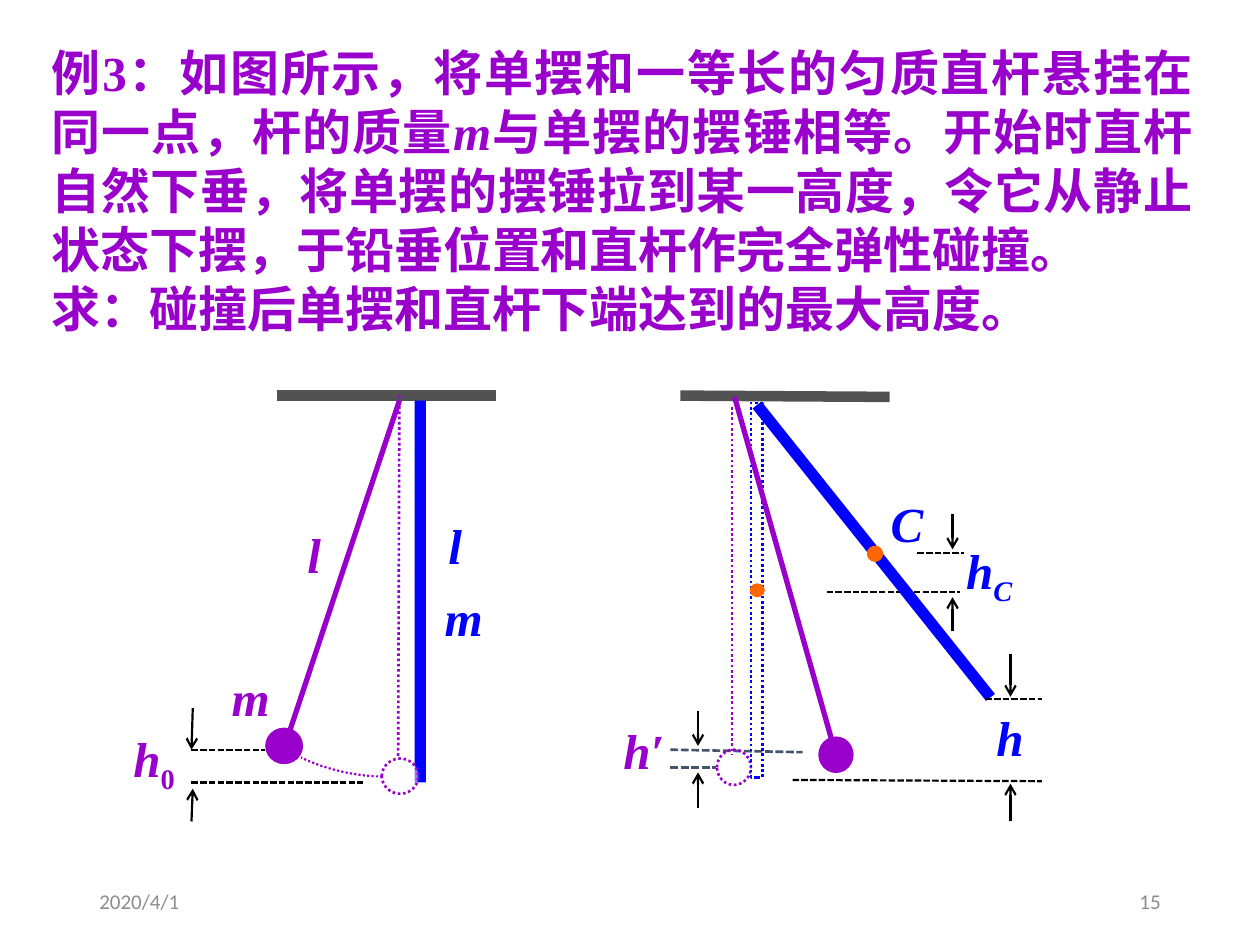
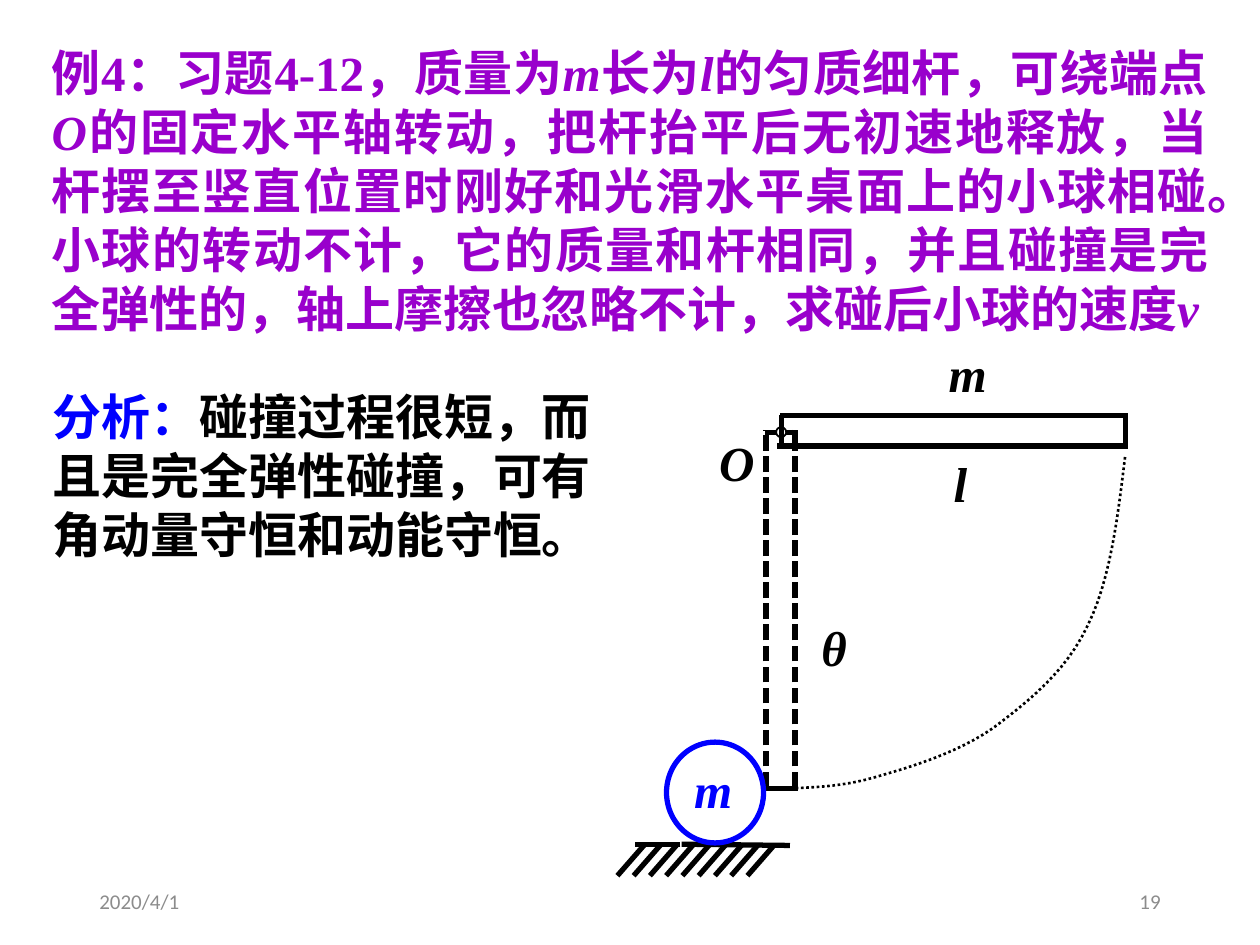
import dataclasses

import pptx
import pptx.dml.color
import pptx.enum.dml
import pptx.enum.shapes
import pptx.enum.text
import pptx.oxml
import pptx.oxml.ns
import pptx.oxml.xmlchemy
import pptx.util

RGBColor = pptx.dml.color.RGBColor
Dash = pptx.enum.dml.MSO_LINE
Preset = pptx.enum.shapes.MSO_SHAPE
Align = pptx.enum.text.PP_ALIGN
Anchor = pptx.enum.text.MSO_ANCHOR
qn = pptx.oxml.ns.qn

PURPLE = RGBColor(0x99, 0x00, 0xCC)
BLUE = RGBColor(0x00, 0x00, 0xFF)
BLACK = RGBColor(0x00, 0x00, 0x00)
WHITE = RGBColor(0xFF, 0xFF, 0xFF)
ORANGE = RGBColor(0xFF, 0x66, 0x00)
CEILING_GREY = RGBColor(0x52, 0x52, 0x52)
SLATE = RGBColor(0x44, 0x54, 0x6A)
FOOTER_GREY = RGBColor(0x8C, 0x8C, 0x8C)

SERIF = "Times New Roman"
HAN = "Noto Sans CJK SC"
SLIDE_WIDTH = pptx.util.Inches(10)
SLIDE_HEIGHT = pptx.util.Inches(7.5)
COLUMNS, ROWS = 100, 75
LABEL_HEIGHT = 5.7
DOTTED, DASHED = Dash.ROUND_DOT, Dash.SQUARE_DOT
BODY = {"size": pptx.util.Pt(28), "name": SERIF, "bold": True}
FOOTER = {"size": pptx.util.Pt(12), "name": "Calibri"}


@dataclasses.dataclass
class Box:
    left: float
    top: float
    width: float
    height: float

    def point(self, column, row):
        return (round((self.left + column) * SLIDE_WIDTH / COLUMNS),
                round((self.top + row) * SLIDE_HEIGHT / ROWS))

    def inner(self, column, row, width, height):
        return Box(self.left + column, self.top + row, width, height)

    def frame(self):
        return (*self.point(0, 0),
                round(self.width * SLIDE_WIDTH / COLUMNS),
                round(self.height * SLIDE_HEIGHT / ROWS))


def apply_format(target, formats):
    for name, value in formats.items():
        setattr(target, name, value)


def make_element(tag, **attributes):
    element = pptx.oxml.xmlchemy.OxmlElement(tag)
    for name, value in attributes.items():
        element.set(name, str(value))
    return element


def add_span(para, text, color, formats=BODY, italic=False, baseline=None):
    span = para.add_run()
    span.text = text
    apply_format(span.font, formats | {"italic": italic})
    span.font.color.rgb = color
    properties = span.font._element
    if baseline:
        properties.set("baseline", str(baseline))
    properties.find(qn("a:latin")).addnext(make_element("a:ea", typeface=HAN))


def add_text_box(shapes, box, wrap=True, anchor=Anchor.TOP):
    text_box = shapes.add_textbox(*box.frame())
    apply_format(text_box.text_frame, {"word_wrap": wrap, "vertical_anchor": anchor})
    return text_box.text_frame.paragraphs[0]


def format_line(line, color, weight, dash=None):
    if color is None:
        line.fill.background()
        return
    line.color.rgb = color
    line.width = pptx.util.Pt(weight)
    if dash:
        line.dash_style = dash


class Figure:
    def __init__(self, page, box):
        self.shapes = page.shapes.add_group_shape().shapes
        self.box = box

    def line(self, start, end, color=BLACK, weight=1.25, dash=None, arrow=False):
        connector = self.shapes.add_connector(
            pptx.enum.shapes.MSO_CONNECTOR.STRAIGHT,
            *self.box.point(*start), *self.box.point(*end))
        format_line(connector.line, color, weight, dash)
        properties = connector._element.spPr
        if arrow:
            properties.find(qn("a:ln")).append(make_element("a:tailEnd", type="arrow"))
        properties.append(make_element("a:effectLst"))

    def dashes(self, *pairs):
        for start, end in pairs:
            self.line(start, end, dash=DASHED)

    def arrows(self, *pairs):
        for start, end in pairs:
            self.line(start, end, arrow=True)

    def shape(self, preset, place, fill=None, line=None, weight=0.75, dash=None,
              rotation=0, opacity=None):
        shape = self.shapes.add_shape(preset, *self.box.inner(*place).frame())
        shape.shadow.inherit = False
        shape.rotation = rotation
        if fill is None:
            shape.fill.background()
        else:
            shape.fill.solid()
            shape.fill.fore_color.rgb = fill
        if opacity:
            fill_color = shape._element.spPr.find(qn("a:solidFill"))[0]
            fill_color.append(make_element("a:alpha", val=opacity * 1000))
        format_line(shape.line, line, weight, dash)
        return shape

    def label(self, text, column, row, width, color, subscript="", upright=False):
        para = add_text_box(
            self.shapes, self.box.inner(column, row, width, LABEL_HEIGHT), wrap=False)
        add_span(para, text, color, italic=True)
        if subscript:
            add_span(para, subscript, color, italic=not upright, baseline=-25000)

    def curve(self, start, segments, color, weight, dash, steps=12):
        points = []
        origin = start
        for segment in segments:
            corners = (origin, *segment)
            for step in range(1, steps + 1):
                t = step / steps
                shares = ((1 - t) ** 3, 3 * t * (1 - t) ** 2, 3 * t * t * (1 - t), t ** 3)
                points.append(self.box.point(*(
                    sum(share * corner[axis] for share, corner in zip(shares, corners))
                    for axis in (0, 1))))
            origin = segment[-1]
        builder = self.shapes.build_freeform(*self.box.point(*start))
        builder.add_line_segments(points, close=False)
        shape = builder.convert_to_shape()
        shape.shadow.inherit = False
        shape.fill.background()
        format_line(shape.line, color, weight, dash)


def add_problem_page(deck, number, box, paragraphs):
    page = deck.slides.add_slide(deck.slide_layouts[5])
    title = page.shapes.title
    apply_format(title, dict(zip(("left", "top", "width", "height"), box.frame())))
    apply_format(title.text_frame, {
        "word_wrap": True, "vertical_anchor": Anchor.TOP,
        "auto_size": pptx.enum.text.MSO_AUTO_SIZE.NONE})
    for index, (alignment, spans) in enumerate(paragraphs):
        para = title.text_frame.paragraphs[0] if index == 0 else title.text_frame.add_paragraph()
        para.alignment = alignment
        for position, text in enumerate(spans):
            add_span(para, text, PURPLE, italic=position % 2 == 1)
    for text, left, alignment in (("2020/4/1", 6.9, Align.LEFT),
                                  (number, 70.6, Align.RIGHT)):
        para = add_text_box(page.shapes, Box(left, 69.5, 22.5, 4), anchor=Anchor.MIDDLE)
        para.alignment = alignment
        add_span(para, text, FOOTER_GREY, FOOTER)
    return page


def draw_before_collision(page, box):
    figure = Figure(page, box)
    figure.line((13, 1.4), (30.4, 1.4), CEILING_GREY, 6)
    figure.shape(Preset.RECTANGLE, (23.9, 1.8, 0.9, 30.3), BLUE)
    figure.line((22.7, 1.4), (22.6, 30.2), PURPLE, 1.5, DOTTED)
    figure.shape(Preset.OVAL, (12.1, 27.8, 2.9, 2.8), PURPLE, PURPLE)
    figure.line((22.7, 1.8), (14, 28), PURPLE, 3)
    figure.dashes(((6.2, 32.1), (19.8, 32.1)), ((6.2, 29.5), (12, 29.5)))
    figure.arrows(((6.3, 26.2), (6.2, 29.5)), ((6.2, 35.2), (6.3, 32.6)))
    figure.shape(Preset.OVAL, (21.3, 30.2, 2.9, 2.8), WHITE, PURPLE, 1.5, DOTTED, opacity=50)
    for label in (("l", 25.6, 10.4, 3.1, BLUE), ("m", 25.3, 16.1, 5.1, BLUE),
                  ("l", 14.4, 11.1, 3.1, PURPLE), ("m", 8.4, 22.5, 5.1, PURPLE),
                  ("h", 0.6, 27.3, 5.5, PURPLE, "0", True)):
        figure.label(*label)
    swing = figure.shape(Preset.ARC, (12.6, 27, 12.1, 4.3), None, PURPLE, 1.25, DOTTED,
                         rotation=192.6)
    for index, degrees in enumerate((210, 333)):
        swing.adjustments[index] = degrees * 0.6


def draw_after_collision(page, box):
    figure = Figure(page, box)
    figure.line((6, 1.4), (22.6, 1.5), CEILING_GREY, 6)
    figure.line((10.1, 2.3), (10.1, 29.9), PURPLE, 1.5, DOTTED)
    figure.dashes(((14.9, 31.9), (34.7, 32)), ((24.8, 13.9), (28.5, 13.9)),
                  ((17.6, 17), (28.2, 17)))
    for start, end in (((5.2, 29.5), (15.7, 29.7)), ((5.2, 30.9), (8.8, 30.9))):
        figure.line(start, end, SLATE, 1.5, DASHED)
    figure.shape(Preset.OVAL, (8.9, 29.5, 2.7, 2.8), None, PURPLE, 1.5, DOTTED)
    figure.shape(Preset.OVAL, (17, 28.5, 2.7, 2.8), PURPLE, PURPLE)
    figure.arrows(((7.4, 26.4), (7.4, 29.2)), ((7.4, 34.1), (7.4, 31.3)),
                  ((32.2, 21.9), (32.2, 25.3)), ((32.2, 35.2), (32.2, 32.2)),
                  ((27.6, 20.1), (27.6, 17.4)), ((27.6, 10.8), (27.6, 13.6)))
    figure.shape(Preset.RECTANGLE, (11.6, 2, 0.9, 29.7), None, BLUE, 1.5, DOTTED)
    figure.shape(Preset.OVAL, (11.5, 16.3, 1.2, 1.1), ORANGE)
    figure.line((10.3, 1.5), (18, 28.7), PURPLE, 3)
    figure.shape(Preset.RECTANGLE, (20.9, -1.1, 0.9, 29.7), BLUE, rotation=321.4)
    figure.shape(Preset.OVAL, (20.8, 13.3, 1.3, 1.3), ORANGE, rotation=321.4)
    figure.dashes(((30.2, 25.5), (34.7, 25.5)))
    for label in (("h′", 0.5, 26.7, 5.3, PURPLE), ("h", 30.1, 25.7, 4.2, BLUE),
                  ("C", 21.7, 8.7, 4.6, BLUE), ("h", 27.7, 12.4, 6, BLUE, "C")):
        figure.label(*label)


def draw_falling_rod(page, box):
    figure = Figure(page, box)
    for row in (32.6, 4.3):
        figure.line((11.7, row), (14.3, row), BLACK, 3, Dash.LONG_DASH)
    for column in (11.8, 14.1):
        figure.line((column, 32.5), (column, 4.1), BLACK, 3, DASHED)
    figure.shape(Preset.OVAL, (12.6, 3.9, 0.8, 0.8), WHITE, BLACK, 1)
    for start, end in (((40.2, 5.4), (12.7, 5.4)), ((40.3, 3), (12.9, 3)),
                       ((13, 5.5), (13, 2.9)), ((40.3, 2.8), (40.3, 5.6)),
                       ((5, 37), (1.4, 37)), ((13.7, 37.1), (5.1, 37))):
        figure.line(start, end, BLACK, 3)
    for index in range(9):
        top = 2.1 + 1.29 * index
        figure.line((top, 37.1), (top - 2.1, 39.5), BLACK, 3)
    figure.shape(Preset.OVAL, (3.9, 28.9, 7.7, 8), None, BLUE, 3)
    figure.curve((12.9, 32.6), (
        ((15.2, 32.5), (17.6, 32.5), (20.4, 31.7)),
        ((23.2, 30.9), (26.9, 29.8), (29.8, 27.8)),
        ((32.6, 25.7), (35.6, 23.3), (37.3, 19.7)),
        ((39.1, 16.1), (39.7, 11.2), (40.3, 6.2))), BLACK, 1.5, DOTTED)
    for label in (("O", 7.1, 3.8, 4.9, BLACK), ("l", 25.7, 5.5, 3.1, BLACK),
                  ("m", 25.3, -3.2, 5.1, BLACK), ("θ", 15.2, 18.5, 4.1, BLACK),
                  ("m", 5.1, 29.8, 6.8, BLUE)):
        figure.label(*label)


def add_analysis(page, box):
    para = add_text_box(page.shapes, box)
    for text, color in (("分析：", BLUE),
                        ("碰撞过程很短，而且是完全弹性碰撞，可有角动量守恒和动能守恒。", BLACK)):
        add_span(para, text, color, BODY | {"name": HAN})


def main():
    deck = pptx.Presentation()
    apply_format(deck, {"slide_width": SLIDE_WIDTH, "slide_height": SLIDE_HEIGHT})
    page = add_problem_page(deck, "15", Box(3.1, 2.9, 92.6, 24.6), (
        (Align.JUSTIFY, (
            "例3：如图所示，将单摆和一等长的匀质直杆悬挂在同一点，杆的质量", "m",
            "与单摆的摆锤相等。开始时直杆自然下垂，将单摆的摆锤拉到某一高度，"
            "令它从静止状态下摆，于铅垂位置和直杆作完全弹性碰撞。")),
        (Align.LEFT, ("求：碰撞后单摆和直杆下端达到的最大高度。",))))
    draw_before_collision(page, Box(9, 30, 31, 36))
    draw_after_collision(page, Box(48, 30, 35, 36))
    page = add_problem_page(deck, "19", Box(3.1, 2.9, 93.8, 24.6), (
        (Align.JUSTIFY, (
            "例4：习题4-12，质量为", "m", "长为", "l", "的匀质细杆，可绕端点", "O",
            "的固定水平轴转动，把杆抬平后无初速地释放，当杆摆至竖直位置时刚好和"
            "光滑水平桌面上的小球相碰。小球的转动不计，它的质量和杆相同，并且碰撞是"
            "完全弹性的，轴上摩擦也忽略不计，求碰后小球的速度", "v")),))
    draw_falling_rod(page, Box(49, 30, 41, 40))
    add_analysis(page, Box(3.2, 30.2, 45.3, 15.1))
    deck.save("out.pptx")


if __name__ == "__main__":
    main()
